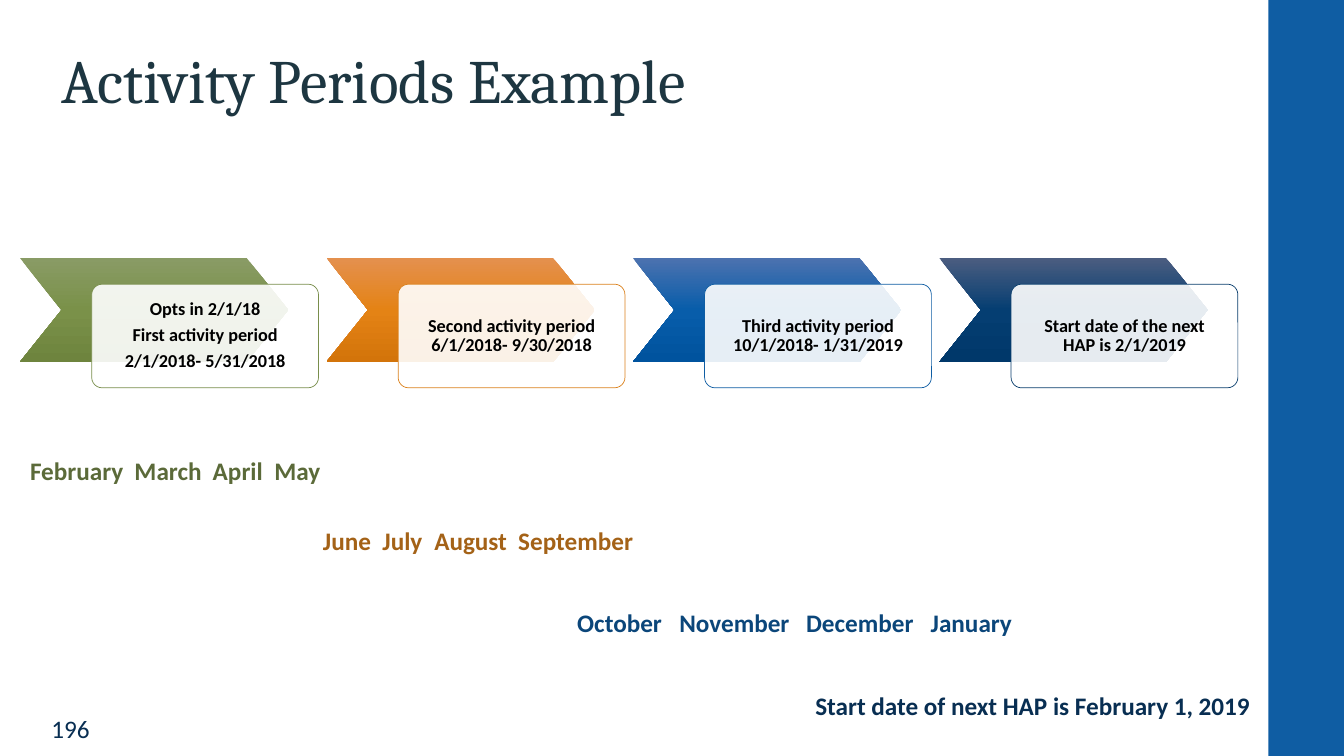
import pptx
import pptx.util
import pptx.dml.color
import pptx.enum.shapes
import pptx.enum.text
import pptx.oxml.ns
import copy
from lxml import etree

Pt = pptx.util.Pt
qn = pptx.oxml.ns.qn
SHAPES = pptx.enum.shapes.MSO_SHAPE
ANCHOR = pptx.enum.text.MSO_ANCHOR
CENTER = pptx.enum.text.PP_ALIGN.CENTER


def color(hex_string):
    return pptx.dml.color.RGBColor.from_string(hex_string)


def write(shape, lines, frame_format, paragraph_format, font_format, hex_string, tabs=()):
    frame = shape.text_frame
    frame.word_wrap = True
    for name, value in frame_format.items():
        setattr(frame, name, value)
    for index, line in enumerate(lines):
        paragraph = frame.paragraphs[0] if index == 0 else frame.add_paragraph()
        paragraph.text = line
        for name, value in paragraph_format.items():
            setattr(paragraph, name, value)
        if tabs:
            tab_list = etree.SubElement(paragraph._p.get_or_add_pPr(), qn("a:tabLst"))
            for position in tabs:
                etree.SubElement(tab_list, qn("a:tab"), pos=str(Pt(position)), algn="l")
        for name, value in font_format.items():
            setattr(paragraph.font, name, value)
        paragraph.font.color.rgb = color(hex_string)


presentation = pptx.Presentation()
presentation.slide_width = Pt(960)
presentation.slide_height = Pt(540)
slide = presentation.slides.add_slide(presentation.slide_layouts[6])
shapes = slide.shapes

side_band = shapes.add_shape(SHAPES.RECTANGLE, Pt(906), Pt(0), Pt(54), Pt(540))
side_band.shadow.inherit = False
side_band.fill.solid()
side_band.fill.fore_color.rgb = color("0F5DA3")
side_band.line.fill.background()

title = shapes.add_textbox(Pt(36.7), Pt(32.4), Pt(828), Pt(65.5))
write(title, ["Activity Periods Example"], {}, {"line_spacing": 0.9},
      {"name": "Cambria", "size": Pt(44)}, "1D3641")

no_margins = dict.fromkeys(["margin_left", "margin_right", "margin_top", "margin_bottom"], 0)
page_number = shapes.add_textbox(Pt(36.7), Pt(504.7), Pt(54), Pt(31))
write(page_number, ["196"], no_margins | {"vertical_anchor": ANCHOR.MIDDLE}, {},
      {"name": "Calibri", "size": Pt(18)}, "082E52")

periods = [
    (["Opts in 2/1/18", "First activity period", "2/1/2018- 5/31/2018"],
     ["899B65", "7A9149", "6E843E"], "798E4C"),
    (["Second activity period 6/1/2018- 9/30/2018"],
     ["E4904E", "E48315", "D3740A"], "DB821E"),
    (["Third activity period 10/1/2018- 1/31/2019"],
     ["4C72AF", "085DAA", "00539E"], "0F5DA3"),
    (["Start date of the next HAP is 2/1/2019"],
     ["4B5D80", "053E72", "00386A"], "0A3E6D"),
]
card_frame = dict.fromkeys(no_margins, Pt(9.4)) | {"vertical_anchor": ANCHOR.MIDDLE}
card_paragraph = {"alignment": CENTER, "line_spacing": 0.9, "space_after": Pt(4.5)}
card_font = {"name": "Calibri", "size": Pt(13), "bold": True}

for index, (lines, gradient, outline) in enumerate(periods):
    left = 14.4 + index * 218.9

    chevron = shapes.add_shape(SHAPES.CHEVRON, Pt(left), Pt(184.4), Pt(191.5), Pt(74))
    chevron.adjustments[0] = 0.4
    chevron.shadow.inherit = False
    chevron.line.fill.background()
    chevron.fill.gradient()
    chevron.fill.gradient_angle = 270
    last_stop = chevron._element.spPr.findall(".//" + qn("a:gs"))[-1]
    last_stop.addnext(copy.deepcopy(last_stop))
    for stop, position, shade in zip(chevron.fill.gradient_stops, [0, 0.5, 1], gradient):
        stop.position = position
        stop.color.rgb = color(shade)

    card = shapes.add_shape(SHAPES.ROUNDED_RECTANGLE, Pt(left + 51.1), Pt(203), Pt(162), Pt(74))
    card.adjustments[0] = 0.1
    card.shadow.inherit = False
    card.fill.solid()
    card.fill.fore_color.rgb = color("FFFFFF")
    card_color = card._element.spPr.find(qn("a:solidFill")).find(qn("a:srgbClr"))
    etree.SubElement(card_color, qn("a:alpha"), val="90000")
    card.line.color.rgb = color(outline)
    card.line.width = Pt(0.5)
    write(card, lines, card_frame, card_paragraph, card_font, "000000")

month_rows = [
    (14.4, 321.8, 836, ["February", "March", "April", "May"], [74.6, 130.5, 174.5], "5B6A39"),
    (223.6, 371.5, 613, ["June", "July", "August", "September"], [42.5, 79.5, 139.5], "A46217"),
    (405.2, 430.4, 400, ["October", "November", "December", "January"], [73, 163.5, 252.5], "0B467A"),
    (575.3, 489.2, 380, ["Start date of next HAP is February 1, 2019"], [], "082E52"),
]
for left, top, width, words, tabs, hex_string in month_rows:
    row = shapes.add_textbox(Pt(left), Pt(top), Pt(width), Pt(29))
    write(row, ["\t".join(words)], {}, {},
          {"name": "Calibri", "size": Pt(18), "bold": True}, hex_string, tabs)

presentation.save("out.pptx")
